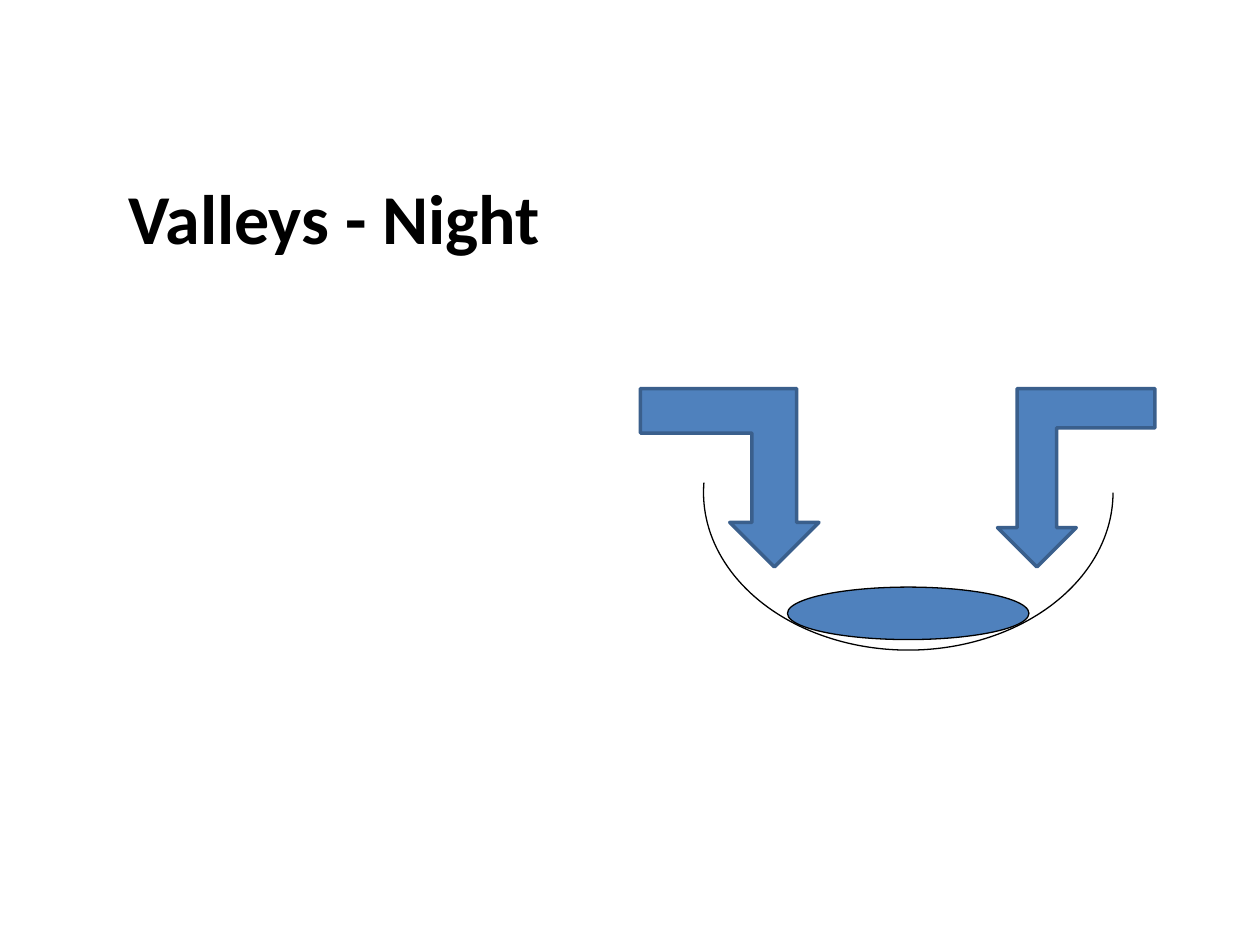
from dataclasses import dataclass

from pptx import Presentation
from pptx.dml.color import RGBColor
from pptx.enum.shapes import MSO_SHAPE as Preset
from pptx.enum.text import MSO_ANCHOR as Anchor, MSO_AUTO_SIZE as AutoSize, PP_ALIGN as Align
from pptx.util import Pt


@dataclass(frozen=True)
class Theme:
    ink: RGBColor = RGBColor(0x00, 0x00, 0x00)
    air: RGBColor = RGBColor(0x4F, 0x81, 0xBD)
    air_edge: RGBColor = RGBColor(0x3A, 0x5F, 0x8C)
    font: str = "Calibri"
    title_size: float = 40
    thin: float = 0.75
    thick: float = 2


THEME = Theme()


def add_part(slide, preset, box, edge, weight, fill=None):
    part = slide.shapes.add_shape(preset, *map(Pt, box))
    part.shadow.inherit = False
    if fill is None:
        part.fill.background()
    else:
        part.fill.solid()
        part.fill.fore_color.rgb = fill
    part.line.color.rgb = edge
    part.line.width = Pt(weight)
    return part


def place_title(slide, box, wording):
    heading = slide.shapes.title
    heading.left, heading.top, heading.width, heading.height = map(Pt, box)
    frame = heading.text_frame
    frame_format = {"word_wrap": True, "auto_size": AutoSize.NONE,
                    "vertical_anchor": Anchor.TOP}
    for name, value in frame_format.items():
        setattr(frame, name, value)
    frame.text = wording
    line = frame.paragraphs[0]
    line.alignment = Align.LEFT
    font = line.runs[0].font
    font_format = {"name": THEME.font, "size": Pt(THEME.title_size), "bold": True}
    for name, value in font_format.items():
        setattr(font, name, value)
    font.color.rgb = THEME.ink


def draw_valley(slide, box):
    left, top, width, height = box
    bottom = top + height

    # Valley floor: lower half of an ellipse, its left end slightly raised
    valley_width, valley_height = 234, 180
    valley_left = left + 36
    valley = add_part(slide, Preset.ARC,
                      (valley_left, bottom - valley_height, valley_width, valley_height),
                      THEME.ink, THEME.thin)
    for index, degrees in enumerate((0, 182.8)):
        valley.adjustments[index] = degrees * 60000 / 100000

    # Pool of cold air, centred in the valley
    pool_width, pool_height = 138, 30
    pool_left = valley_left + (valley_width - pool_width) / 2
    add_part(slide, Preset.OVAL, (pool_left, bottom - 36, pool_width, pool_height),
             THEME.ink, THEME.thin, THEME.air)

    # Air flowing down both slopes
    drop, right_reach, left_reach = 102, 90, 102
    flows = ((left + width - right_reach, right_reach, False), (left, left_reach, True))
    for flow_left, reach, mirrored in flows:
        flow = add_part(slide, Preset.BENT_UP_ARROW, (flow_left, top, reach, drop),
                        THEME.air_edge, THEME.thick, THEME.air)
        flow.rotation = 180
        if mirrored:
            flow.element.spPr.get_or_add_xfrm().set("flipH", "1")


def main():
    deck = Presentation()
    deck.slide_width, deck.slide_height = Pt(720), Pt(540)
    slide = deck.slides.add_slide(deck.slide_layouts[5])
    draw_valley(slide, (366, 222, 294, 149.5))
    place_title(slide, (66, 96, 294, 55.5), "Valleys - Night")
    deck.save("out.pptx")


if __name__ == "__main__":
    main()
